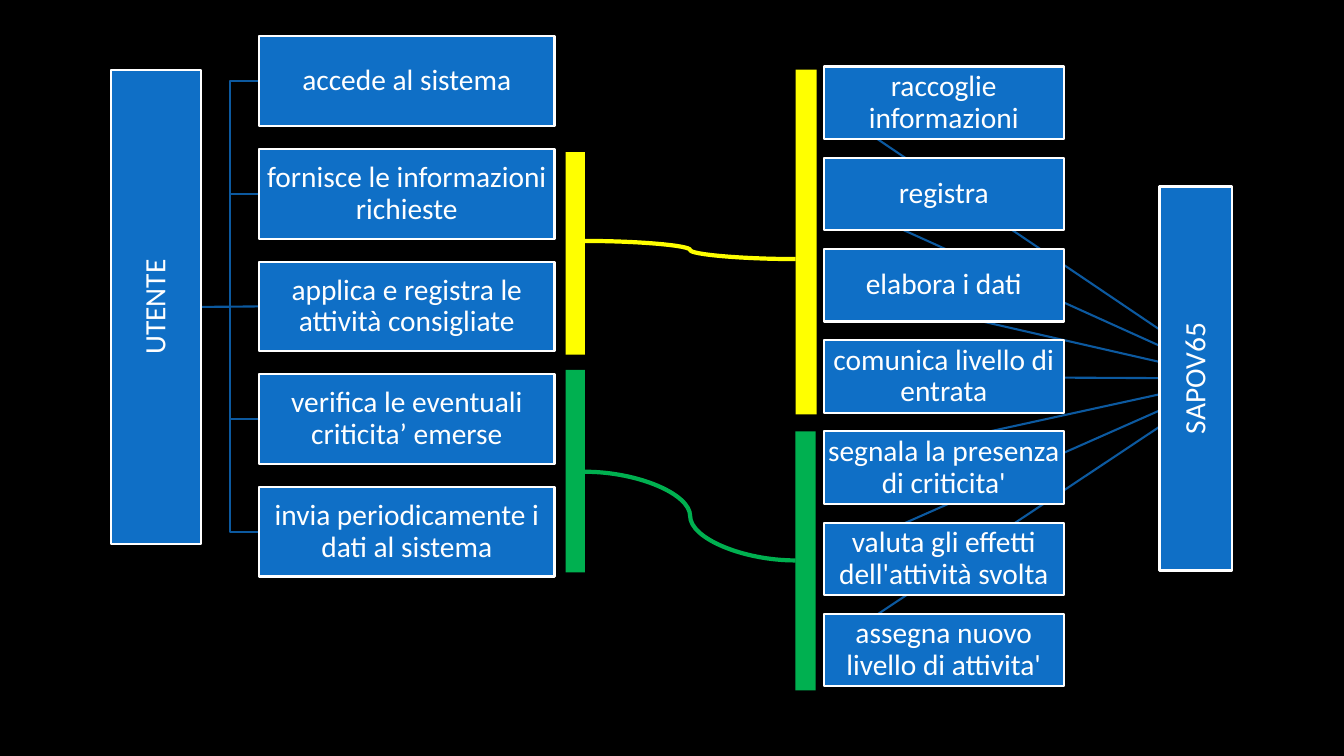
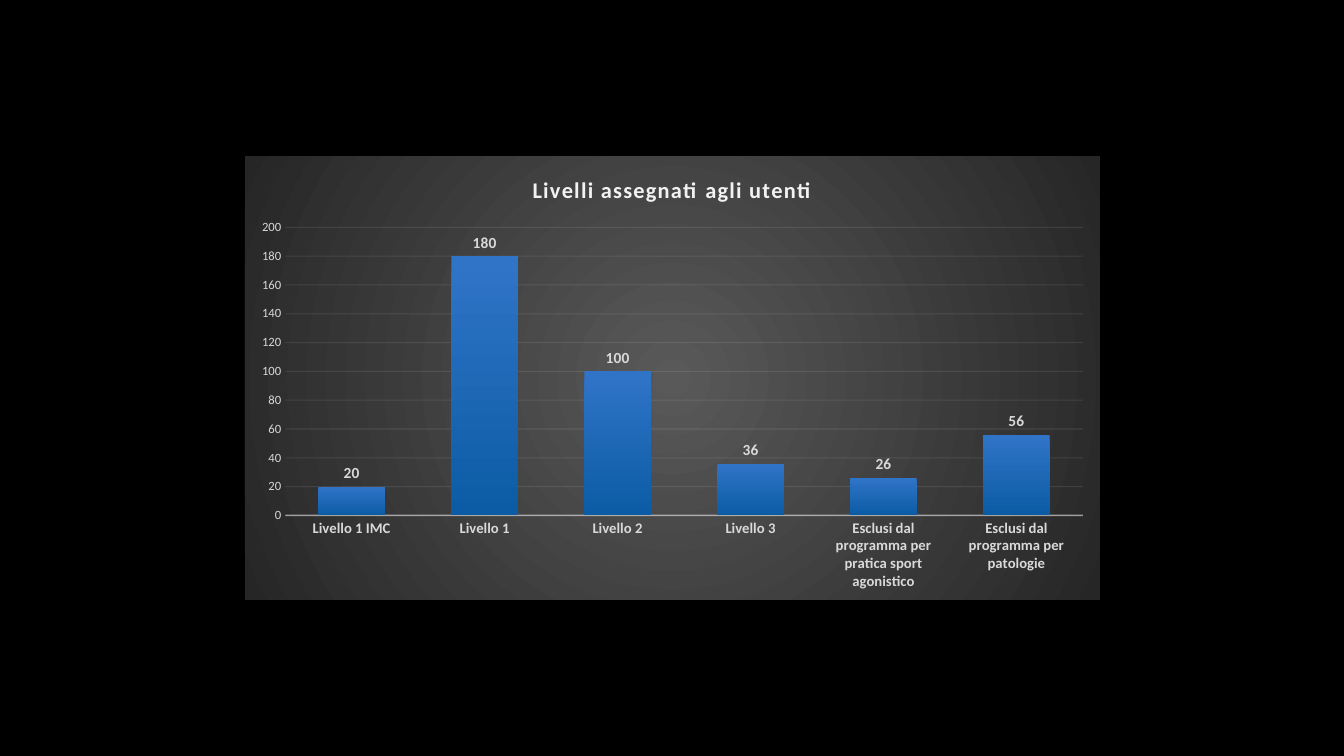
import pptx
import pptx.chart.data
import pptx.dml.color
import pptx.enum.chart
import pptx.enum.shapes
import pptx.enum.text
import pptx.oxml
import pptx.oxml.ns
import pptx.util

Inches, Pt = pptx.util.Inches, pptx.util.Pt
RGB = pptx.dml.color.RGBColor
CONNECTOR = pptx.enum.shapes.MSO_CONNECTOR
RECTANGLE = pptx.enum.shapes.MSO_SHAPE.RECTANGLE
qn = pptx.oxml.ns.qn

FONT = "Calibri"
BLACK = RGB(0x00, 0x00, 0x00)
WHITE = RGB(0xFF, 0xFF, 0xFF)
BLUE = RGB(0x0F, 0x6F, 0xC6)
LINK_BLUE = RGB(0x0C, 0x59, 0x9F)
YELLOW = RGB(0xFF, 0xFF, 0x00)
GREEN = RGB(0x00, 0xB0, 0x50)
PALE = RGB(0xF2, 0xF2, 0xF2)
LABEL_GREY = RGB(0xD9, 0xD9, 0xD9)
BAR_TOP = RGB(0x30, 0x74, 0xC7)
BAR_BOTTOM = RGB(0x0C, 0x5C, 0xA5)
PANEL_CENTRE = RGB(0x59, 0x59, 0x59)
PANEL_EDGE = RGB(0x26, 0x26, 0x26)

# Content: root "bar" is (left, top, width, height) as seen upright
USER = {
    "root": "UTENTE", "bar": (1.10, 0.69, 0.89, 4.71),
    "left": 2.57, "size": (2.93, 0.89), "first": 0.36, "last": 4.83,
    "steps": [
        "accede al sistema",
        "fornisce le informazioni richieste",
        "applica e registra le attività consigliate",
        "verifica le eventuali criticita’ emerse",
        "invia periodicamente i dati al sistema",
    ],
}
SYSTEM = {
    "root": "SAPOV65", "bar": (11.50, 1.85, 0.72, 3.81),
    "left": 8.17, "size": (2.38, 0.72), "first": 0.66, "last": 6.09,
    "steps": [
        "raccoglie informazioni",
        "registra",
        "elabora i dati",
        "comunica livello di entrata",
        "segnala la presenza di criticita'",
        "valuta gli effetti dell'attività svolta",
        "assegna nuovo livello di attivita'",
    ],
}
# Colour, bar beside the user steps, bar beside the system steps
BRIDGES = [
    (YELLOW, (5.61, 1.51, 0.19, 2.01), (7.89, 0.69, 0.21, 3.42), 2.39, 2.57),
    (GREEN, (5.61, 3.67, 0.19, 2.01), (7.89, 4.28, 0.20, 2.57), 4.68, 5.56),
]
CHART_TITLE = "Livelli assegnati agli utenti"
LEVELS = [
    ("Livello 1 IMC", 20),
    ("Livello 1", 180),
    ("Livello 2", 100),
    ("Livello 3", 36),
    ("Esclusi dal programma per pratica sport agonistico", 26),
    ("Esclusi dal programma per patologie", 56),
]


def set_font(font, size, color, bold=False):
    font.name, font.size, font.bold = FONT, Pt(size), bold
    font.color.rgb = color


def add_rect(slide, box, color):
    sp = slide.shapes.add_shape(RECTANGLE, *map(Inches, box))
    sp.shadow.inherit = False
    sp.fill.solid()
    sp.fill.fore_color.rgb = color
    sp.line.fill.background()
    return sp


def add_box(slide, box, text, upright=False):
    left, top, width, height = box
    if upright:  # swap the sides about the centre, then turn
        box = (left + (width - height) / 2, top + (height - width) / 2, height, width)
    sp = add_rect(slide, box, BLUE)
    sp.rotation = 270 if upright else 0
    sp.line.color.rgb = WHITE
    sp.line.width = Pt(1.5)
    tf = sp.text_frame
    tf.word_wrap = True
    tf.vertical_anchor = pptx.enum.text.MSO_ANCHOR.MIDDLE
    tf.margin_left = tf.margin_right = tf.margin_top = tf.margin_bottom = Inches(0.01)
    p = tf.paragraphs[0]
    p.alignment = pptx.enum.text.PP_ALIGN.CENTER
    p.line_spacing = 0.9
    r = p.add_run()
    r.text = text
    set_font(r.font, 21, WHITE)


def add_link(slide, kind, start, end, color, width):
    link = slide.shapes.add_connector(kind, *map(Inches, start + end))
    link.line.color.rgb = color
    link.line.width = Pt(width)
    link._element.spPr.append(pptx.oxml.parse_xml(
        f'<a:effectLst {pptx.oxml.ns.nsdecls("a")}/>'))


def add_tree(slide, tree, kind):
    """Root bar, evenly spaced steps, and a link to the left of each step."""
    left, top, width, height = tree["bar"]
    step_w, step_h = tree["size"]
    pitch = (tree["last"] - tree["first"]) / (len(tree["steps"]) - 1)
    tops = [tree["first"] + i * pitch for i in range(len(tree["steps"]))]
    root = (left + width, top + height / 2)
    for y in tops:
        target = (tree["left"], y + step_h / 2)
        level = abs(target[1] - root[1]) < 0.03
        add_link(slide, CONNECTOR.STRAIGHT if level else kind, root, target, LINK_BLUE, 1.5)
    add_box(slide, tree["bar"], tree["root"], upright=True)
    for y, text in zip(tops, tree["steps"]):
        add_box(slide, (tree["left"], y, step_w, step_h), text)


def set_line(line, color, width, opacity):
    line.color.rgb = color
    line.width = Pt(width)
    clr = line._ln.find(".//" + qn("a:srgbClr"))
    clr.append(pptx.oxml.parse_xml(
        f'<a:alpha {pptx.oxml.ns.nsdecls("a")} val="{opacity * 1000}"/>'))


def fill_panel(chart):
    """Radial gradient behind the whole chart."""
    chart._chartSpace.chart.addnext(pptx.oxml.parse_xml(
        f'<c:spPr {pptx.oxml.ns.nsdecls("c", "a")}><a:gradFill><a:gsLst>'
        f'<a:gs pos="0"><a:srgbClr val="{PANEL_CENTRE}"/></a:gs>'
        f'<a:gs pos="100000"><a:srgbClr val="{PANEL_EDGE}"/></a:gs></a:gsLst>'
        '<a:path path="circle"><a:fillToRect l="50000" t="50000" r="50000" b="50000"/>'
        '</a:path></a:gradFill><a:ln><a:noFill/></a:ln></c:spPr>'))


def build_flow(slide):
    add_tree(slide, USER, CONNECTOR.ELBOW)
    add_tree(slide, SYSTEM, CONNECTOR.STRAIGHT)
    for color, near, far, start_y, end_y in BRIDGES:
        add_rect(slide, near, color)
        add_rect(slide, far, color)
        add_link(slide, CONNECTOR.CURVE, (near[0] + near[2], start_y),
                 (far[0], end_y), color, 3)


def build_chart(slide):
    enum = pptx.enum.chart
    data = pptx.chart.data.CategoryChartData()
    data.categories = [name for name, _ in LEVELS]
    data.add_series("Series 1", [value for _, value in LEVELS])
    chart = slide.shapes.add_chart(
        enum.XL_CHART_TYPE.COLUMN_CLUSTERED,
        *map(Inches, (2.43, 1.55, 8.48, 4.4)), data).chart
    set_font(chart.font, 10, WHITE)
    fill_panel(chart)
    chart.has_legend = False

    # Title
    chart.has_title = True
    chart.chart_title.include_in_layout = False
    r = chart.chart_title.text_frame.paragraphs[0].add_run()
    r.text = CHART_TITLE
    set_font(r.font, 16, PALE, bold=True)
    r.font._element.set("spc", "100")

    # Axes
    cat, val = chart.category_axis, chart.value_axis
    for axis, size, bold in ((cat, 10.5, True), (val, 9, False)):
        set_font(axis.tick_labels.font, size, LABEL_GREY, bold)
        axis.major_tick_mark = axis.minor_tick_mark = enum.XL_TICK_MARK.NONE
    set_line(cat.format.line, PALE, 1, 54)
    val.format.line.fill.background()
    val.minimum_scale, val.maximum_scale, val.major_unit = 0, 200, 20
    set_line(val.major_gridlines.format.line, PALE, 0.75, 10)

    # Columns and their values
    plot = chart.plots[0]
    plot.vary_by_categories = False
    plot.gap_width, plot.overlap = 100, -24
    series = plot.series[0]
    fill = series.format.fill
    fill.gradient()
    fill.gradient_angle = 270
    for stop, position, color in zip(fill.gradient_stops, (0, 1), (BAR_TOP, BAR_BOTTOM)):
        stop.position = position
        stop.color.rgb = color
    labels = series.data_labels
    labels.show_value = True
    labels.position = enum.XL_LABEL_POSITION.OUTSIDE_END
    set_font(labels.font, 11, LABEL_GREY, bold=True)


def main():
    prs = pptx.Presentation()
    prs.slide_width, prs.slide_height = Inches(13.33), Inches(7.5)
    background = prs.slide_master.background.fill
    background.solid()
    background.fore_color.rgb = BLACK
    for build in (build_flow, build_chart):
        build(prs.slides.add_slide(prs.slide_layouts[6]))
    prs.save("out.pptx")


if __name__ == "__main__":
    main()
